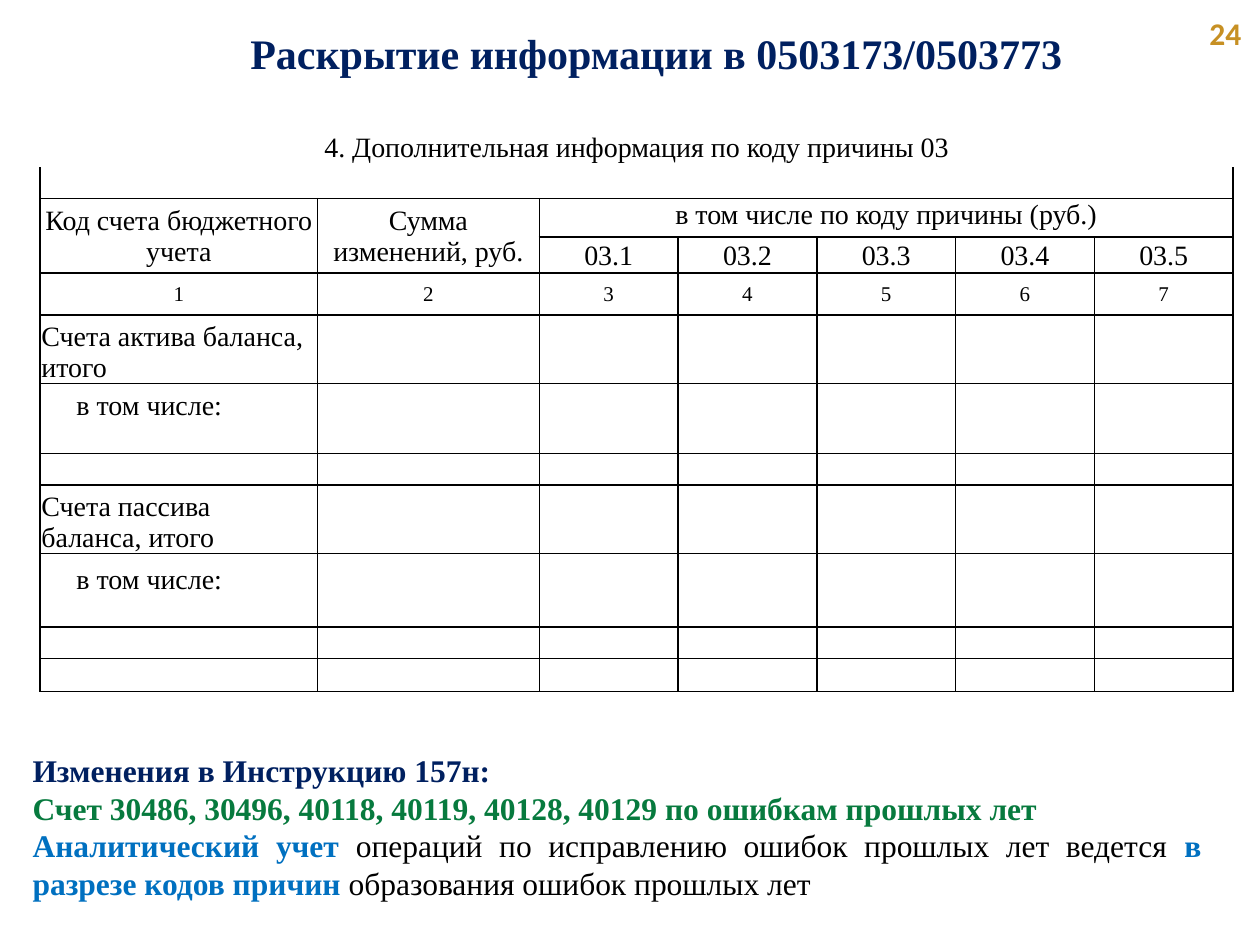
import pptx
import pptx.dml.color
import pptx.enum.text
import pptx.oxml.ns
import pptx.util
from lxml import etree

Pt = pptx.util.Pt
qn = pptx.oxml.ns.qn
ALIGN = pptx.enum.text.PP_ALIGN
ANCHOR = pptx.enum.text.MSO_ANCHOR

SERIF = "Times New Roman"
NAVY, GREEN, BLUE, GOLD = "002060", "077A3E", "0070C0", "C79023"
BLACK, WHITE = "000000", "FFFFFF"


def rgb(value):
    return pptx.dml.color.RGBColor.from_string(value)


class SlideBuilder:
    def __init__(self, slide):
        self.s = slide

    def style(self, font, size=None, color=None, bold=None, name=None):
        if name:
            font.name = name
        if size:
            font.size = Pt(size)
        if color:
            font.color.rgb = rgb(color)
        font.bold = bold

    def text(self, box, paragraphs, size, align=ALIGN.LEFT, name=SERIF, grow=False):
        sp = self.s.shapes.add_textbox(*map(Pt, box))
        tf = sp.text_frame
        tf.word_wrap = True
        if grow:
            tf.auto_size = pptx.enum.text.MSO_AUTO_SIZE.SHAPE_TO_FIT_TEXT
        for i, runs in enumerate(paragraphs):
            p = tf.add_paragraph() if i else tf.paragraphs[0]
            p.alignment = align
            if len(runs) == 1:
                content, color, bold = runs[0]
                p.add_run().text = content
                self.style(p.font, size, color, bold, name)
                continue
            self.style(p.font, size, name=name)
            for content, color, bold in runs:
                r = p.add_run()
                r.text = content
                self.style(r.font, color=color, bold=bold)

    def table(self, left, top, widths, heights):
        frame = self.s.shapes.add_table(
            len(heights), len(widths), Pt(left), Pt(top), Pt(sum(widths)), Pt(sum(heights))
        )
        table = frame.table
        table.first_row = table.horz_banding = False
        for column, width in zip(table.columns, widths):
            column.width = Pt(width)
        for row, height in zip(table.rows, heights):
            row.height = Pt(height)
        return table

    def cell(self, cell, sides, filled):
        cell.margin_left = cell.margin_right = cell.margin_top = Pt(0.72)
        cell.margin_bottom = 0
        tcPr = cell._tc.get_or_add_tcPr()
        for side in "LRTB":
            ln = etree.SubElement(tcPr, qn(f"a:ln{side}"), w=str(Pt(1)))
            if side in sides:
                fill = etree.SubElement(ln, qn("a:solidFill"))
                etree.SubElement(fill, qn("a:srgbClr"), val=BLACK)
            else:
                etree.SubElement(ln, qn("a:noFill"))
        if filled:
            cell.fill.solid()
            cell.fill.fore_color.rgb = rgb(WHITE)
        else:
            cell.fill.background()
        if not cell.text_frame.text:
            p = cell.text_frame.paragraphs[0]
            etree.SubElement(p._p, qn("a:endParaRPr"), sz="1000")

    def cell_text(self, cell, content, size=16, align=ALIGN.CENTER, anchor=ANCHOR.MIDDLE, indent=0):
        cell.vertical_anchor = anchor
        p = cell.text_frame.paragraphs[0]
        p.add_run().text = content
        p.alignment = align
        self.style(p.font, size, BLACK, False, SERIF)
        if indent:
            p._p.get_or_add_pPr().set("marL", str(Pt(indent)))


def build_table(slide):
    widths = [158.4, 126.8] + [79.3] * 5
    heights = [22, 18, 22, 20.5, 24, 36, 22, 18, 18, 36.5, 24, 18, 18, 19]
    table = slide.table(23, 73.5, widths, heights)
    last = len(widths) - 1

    slide.cell_text(table.cell(0, 0), "4. Дополнительная информация по коду причины 03")
    slide.cell_text(table.cell(2, 0), "Код счета бюджетного учета")
    slide.cell_text(table.cell(2, 1), "Сумма изменений, руб.")
    slide.cell_text(table.cell(2, 2), "в том числе по коду причины (руб.)", anchor=ANCHOR.TOP)
    for i in range(1, 6):
        slide.cell_text(table.cell(3, i + 1), f"03.{i}")
    for c in range(len(widths)):
        slide.cell_text(table.cell(4, c), str(c + 1), size=12)
    for row, label in ((5, "Счета актива баланса, итого"), (9, "Счета пассива баланса, итого")):
        slide.cell_text(table.cell(row, 0), label, align=ALIGN.LEFT, anchor=ANCHOR.BOTTOM)
        slide.cell_text(
            table.cell(row + 1, 0), "в том числе:", align=ALIGN.LEFT, anchor=ANCHOR.BOTTOM, indent=20
        )

    row_sides = {0: "", 1: "LRB"}
    label_sides = {6: "LRT", 7: "LRB", 10: "LRT", 11: "LRB"}
    for r in range(len(heights)):
        for c in range(len(widths)):
            sides = row_sides.get(r, "LRTB")
            if c == 0:
                sides = label_sides.get(r, sides)
            slide.cell(table.cell(r, c), sides, 5 <= r <= 9 and 2 <= c <= 4)

    spans = [(0, 0, 0, last), (1, 0, 1, last), (2, 0, 3, 0), (2, 1, 3, 1), (2, 2, 2, last)]
    spans += [(r, c, r + 1, c) for r in (6, 10) for c in range(1, last + 1)]
    for r1, c1, r2, c2 in spans:
        table.cell(r1, c1).merge(table.cell(r2, c2))


def main():
    prs = pptx.Presentation()
    prs.slide_width, prs.slide_height = Pt(720), Pt(540)
    slide = SlideBuilder(prs.slides.add_slide(prs.slide_layouts[6]))

    slide.text((684, 4.3, 36, 29), [[("24", GOLD, True)]], 18, name="Calibri")
    slide.text(
        (65.5, 12.2, 619, 36),
        [[("Раскрытие информации в 0503173/0503773", NAVY, True)]],
        24,
        ALIGN.CENTER,
    )
    build_table(slide)
    slide.text(
        (11.5, 425.5, 682, 94.3),
        [
            [("Изменения в Инструкцию 157н:", NAVY, True)],
            [("Счет 30486, 30496, 40118, 40119, 40128, 40129 по ошибкам прошлых лет", GREEN, True)],
            [
                ("Аналитический учет ", BLUE, True),
                ("операций по исправлению ошибок прошлых лет ведется ", BLACK, False),
                ("в разрезе кодов причин", BLUE, True),
                (" образования ошибок прошлых лет", BLACK, False),
            ],
        ],
        18,
        ALIGN.JUSTIFY,
        grow=True,
    )
    prs.save("out.pptx")


if __name__ == "__main__":
    main()
